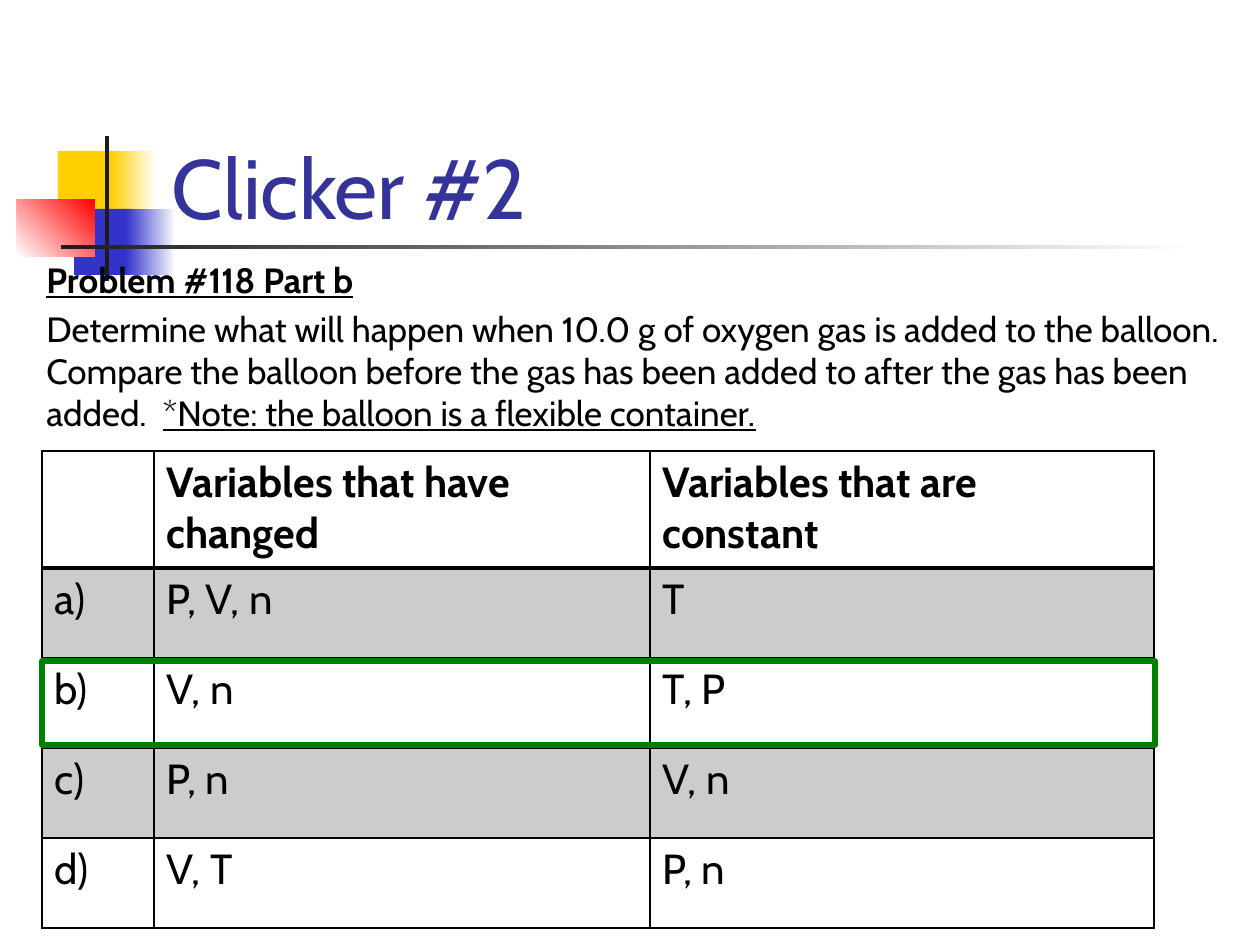
import lxml.etree
import pptx
import pptx.util
import pptx.dml.color
import pptx.enum.shapes
import pptx.enum.text
import pptx.oxml.ns

PX = 914400 / 126
FONT = "Cabin"
COLORS = {
    "yellow": "FFCF01", "blue": "3333CC", "red": "FF0000", "dark": "1C1C1C",
    "white": "FFFFFF", "title": "333399", "black": "000000", "green": "008000",
}


def px(*lengths):
    return [pptx.util.Emu(round(length * PX)) for length in lengths]


def style(span, size, color, bold=False, underline=False):
    span.font.name = FONT
    span.font.size = pptx.util.Pt(size)
    span.font.bold = bold
    span.font.underline = underline
    span.font.color.rgb = pptx.dml.color.RGBColor.from_string(COLORS[color])


deck = pptx.Presentation()
deck.slide_width, deck.slide_height = px(1260, 945)
page = deck.slides.add_slide(deck.slide_layouts[5])
rectangle = pptx.enum.shapes.MSO_SHAPE.RECTANGLE

decorations = [
    ((58, 151, 60, 66), ["yellow"], 0),
    ((111, 151, 45, 66), ["yellow", "white"], 0),
    ((74, 209, 58, 66), ["blue"], 0),
    ((126, 209, 50, 66), ["blue", "white"], 0),
    ((17, 199, 78, 58), ["white", "red"], 45),
    ((105, 136, 4, 145), ["dark"], 0),
    ((61, 245, 1134, 4), ["dark", "white"], 0),
]
for place, names, angle in decorations:
    block = page.shapes.add_shape(rectangle, *px(*place))
    block.shadow.inherit = False
    block.line.fill.background()
    if len(names) == 1:
        block.fill.solid()
        block.fill.fore_color.rgb = pptx.dml.color.RGBColor.from_string(COLORS[names[0]])
    else:
        block.fill.gradient()
        block.fill.gradient_angle = angle
        for stop, name in zip(block.fill.gradient_stops, names):
            stop.color.rgb = pptx.dml.color.RGBColor.from_string(COLORS[name])

title = page.shapes.title
page.shapes._spTree.append(title._element)
title.left, title.top, title.width, title.height = px(159, 86, 1073, 157)
title.text_frame.text = "Clicker #2"
title.text_frame.vertical_anchor = pptx.enum.text.MSO_ANCHOR.BOTTOM
title.text_frame.paragraphs[0].alignment = pptx.enum.text.PP_ALIGN.LEFT
style(title.text_frame.paragraphs[0].runs[0], 48, "title")

problem = [
    [("Problem #118 Part b", True, True)],
    [("Determine what will happen when 10.0 g of oxygen gas is added to the balloon.  "
      "Compare the balloon before the gas has been added to after the gas has been added.  ",
      False, False),
     ("*Note: the balloon is a flexible container.", False, True)],
]
box = page.shapes.add_textbox(*px(34, 252, 1226, 621))
box.text_frame.word_wrap = True
for index, pieces in enumerate(problem):
    para = box.text_frame.add_paragraph() if index else box.text_frame.paragraphs[0]
    para.space_before = pptx.util.Pt(4)
    for text, bold, underline in pieces:
        span = para.add_run()
        span.text = text
        style(span, 20, "black", bold, underline)

answers = [
    ["", "Variables that have changed", "Variables that are constant"],
    ["a)", "P, V, n", "T"],
    ["b)", "V, n", "T, P"],
    ["c)", "P, n", "V, n"],
    ["d)", "V, T", "P, n"],
]
table = page.shapes.add_table(5, 3, *px(42, 451, 1112, 477)).table
table.first_row = False
table.horz_banding = False
for column, width in zip(table.columns, px(112, 496, 504)):
    column.width = width
for row, height in zip(table.rows, px(117, 90, 90, 90, 90)):
    row.height = height

for r, texts in enumerate(answers):
    for c, text in enumerate(texts):
        cell = table.cell(r, c)
        cell.text_frame.text = text
        for span in cell.text_frame.paragraphs[0].runs:
            style(span, 24, "black", bold=r == 0)
        properties = cell._tc.get_or_add_tcPr()
        for side in ("lnL", "lnR", "lnT", "lnB"):
            heavy = (r, side) in ((0, "lnB"), (1, "lnT"))
            border = lxml.etree.SubElement(properties, pptx.oxml.ns.qn("a:" + side))
            border.set("w", str(pptx.util.Pt(2 if heavy else 1)))
            solid = lxml.etree.SubElement(border, pptx.oxml.ns.qn("a:solidFill"))
            lxml.etree.SubElement(solid, pptx.oxml.ns.qn("a:srgbClr"), val=COLORS["black"])
        if r % 2:
            cell.fill.solid()
            cell.fill.fore_color.rgb = pptx.dml.color.RGBColor.from_string(COLORS["black"])
            tint = properties.find(pptx.oxml.ns.qn("a:solidFill"))[0]
            lxml.etree.SubElement(tint, pptx.oxml.ns.qn("a:alpha"), val="20000")
        else:
            cell.fill.background()

highlight = page.shapes.add_shape(rectangle, *px(42, 661, 1113, 84))
highlight.shadow.inherit = False
highlight.fill.background()
highlight.line.color.rgb = pptx.dml.color.RGBColor.from_string(COLORS["green"])
highlight.line.width = pptx.util.Pt(3)

deck.save("out.pptx")
